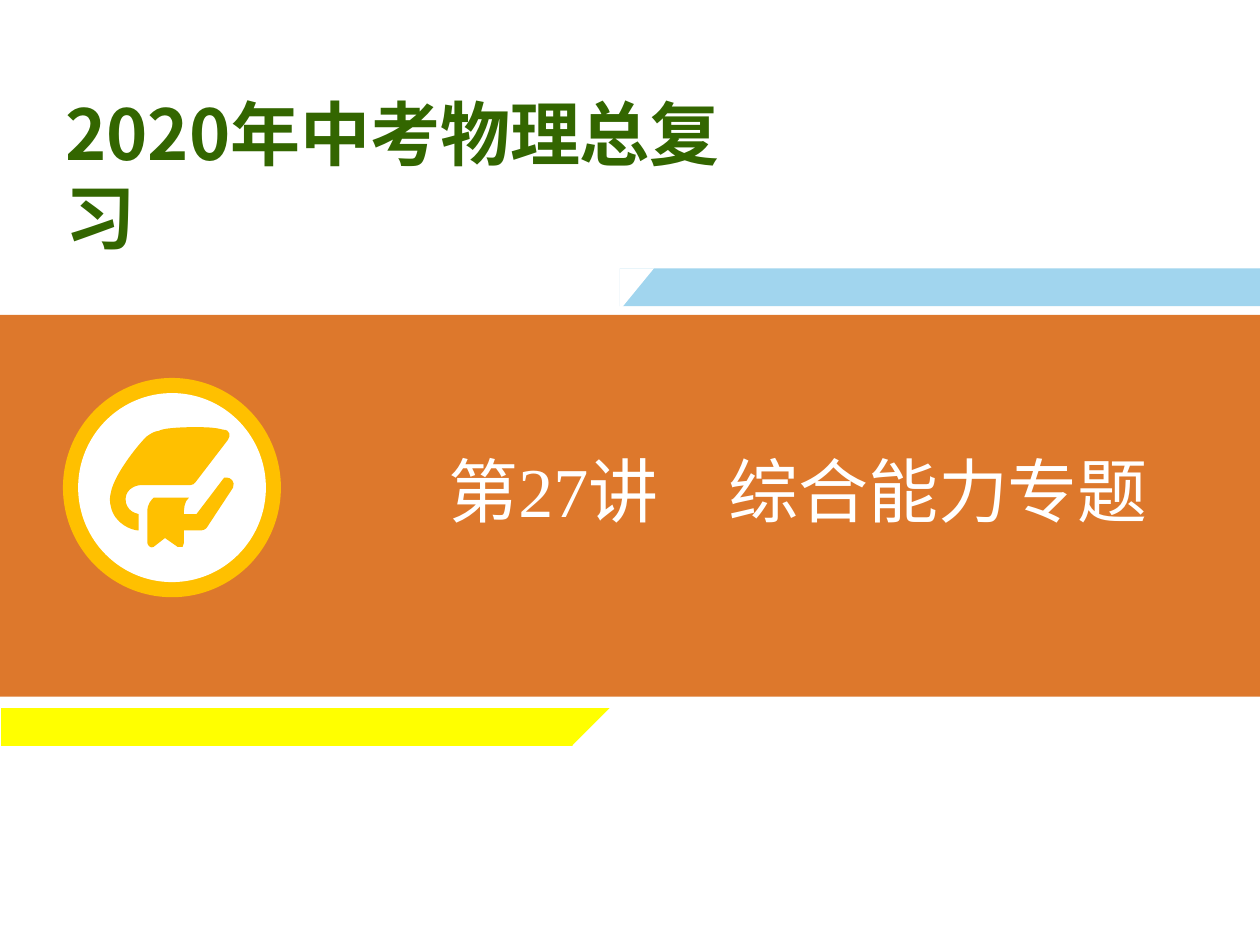
from lxml.etree import SubElement
from pptx import Presentation
from pptx.dml.color import RGBColor
from pptx.enum.shapes import MSO_SHAPE
from pptx.enum.text import MSO_ANCHOR, PP_ALIGN
from pptx.oxml.ns import qn
from pptx.util import Inches, Pt

ORANGE = RGBColor(0xDD, 0x78, 0x2C)
YELLOW = RGBColor(0xFF, 0xFF, 0x00)
GOLD = RGBColor(0xFF, 0xC0, 0x00)
SKY = RGBColor(0xA1, 0xD5, 0xEE)
WHITE = RGBColor(0xFF, 0xFF, 0xFF)
GREEN = RGBColor(0x33, 0x66, 0x00)
CJK_FONT = "Noto Sans CJK SC"
LATIN_FONT = "Times New Roman"

COURSE = "2020年中考物理总复习"
LESSON = "第27讲　综合能力专题"

# Book outlines in inches: one point ends a line, three points make a Bézier curve.
BOOK_PAGES = [
    [(1.78, 3.79)],
    [(1.8, 3.79)],
    [(1.83, 3.79), (1.87, 3.82), (1.85, 3.87)],
    [(1.64, 4.19)],
    [(1.62, 4.21), (1.6, 4.21), (1.59, 4.21)],
    [(1.46, 4.21)],
    [(1.46, 4.31)],
    [(1.46, 4.32), (1.46, 4.33), (1.45, 4.34)],
    [(1.44, 4.34), (1.44, 4.34), (1.43, 4.34)],
    [(1.42, 4.34), (1.42, 4.34), (1.41, 4.34)],
    [(1.31, 4.27)],
    [(1.22, 4.34)],
    [(1.21, 4.34), (1.2, 4.35), (1.19, 4.34)],
    [(1.18, 4.33), (1.17, 4.32), (1.17, 4.31)],
    [(1.17, 4.06)],
    [(1.17, 4), (1.2, 3.97), (1.22, 3.95)],
    [(1.24, 3.95)],
    [(1.5, 3.95)],
    [(1.46, 3.98), (1.46, 4.05), (1.46, 4.08)],
    [(1.56, 4.08)],
]
BOOK_COVER = [
    [(1.54, 3.39)],
    [(1.62, 3.39), (1.7, 3.39), (1.77, 3.41)],
    [(1.83, 3.41), (1.83, 3.46), (1.81, 3.49)],
    [(1.55, 3.83)],
    [(1.54, 3.84), (1.53, 3.85), (1.51, 3.85)],
    [(1.12, 3.85)],
    [(1.07, 3.85), (0.98, 3.89), (1, 3.99)],
    [(1.01, 4.03), (1.04, 4.06), (1.07, 4.07)],
    [(1.08, 4.08), (1.09, 4.08), (1.1, 4.08)],
    [(1.1, 4.21)],
    [(1.05, 4.21), (0.91, 4.16), (0.88, 4.02)],
    [(0.87, 3.98), (0.87, 3.95), (0.88, 3.91)],
    [(0.91, 3.75), (1.13, 3.49), (1.17, 3.46)],
    [(1.2, 3.44), (1.23, 3.42), (1.26, 3.42)],
    [(1.29, 3.4), (1.41, 3.39), (1.54, 3.39)],
]


def paint(shape, color):
    shape.shadow.inherit = False
    shape.fill.solid()
    shape.fill.fore_color.rgb = color
    shape.line.fill.background()


def add_block(shapes, preset, box, color, rotation=0):
    block = shapes.add_shape(preset, *map(Inches, box))
    block.rotation = rotation
    paint(block, color)
    return block


def add_book(shapes):
    """Draw both outlines as lines, then bend the lines that are curves."""
    pages, cover = ([tuple(map(Inches, part[-1])) for part in outline]
                    for outline in (BOOK_PAGES, BOOK_COVER))
    builder = shapes.build_freeform(*pages[0])
    builder.add_line_segments(pages[1:], close=True)
    builder.move_to(*cover[0])
    builder.add_line_segments(cover[1:], close=True)
    book = builder.convert_to_shape()
    paint(book, GOLD)

    segments = list(book._element.iter(qn("a:lnTo")))
    for segment, part in zip(segments, BOOK_PAGES[1:] + BOOK_COVER[1:]):
        if len(part) == 1:
            continue
        curve = segment.getparent().makeelement(qn("a:cubicBezTo"))
        for x, y in part:
            SubElement(curve, qn("a:pt"), x=str(Inches(x) - book.left),
                       y=str(Inches(y) - book.top))
        segment.getparent().replace(segment, curve)


def write(holder, words, font_name, color, bold, alignment):
    frame = holder.text_frame
    frame.word_wrap = True
    frame.vertical_anchor = MSO_ANCHOR.TOP
    paragraph = frame.paragraphs[0]
    paragraph.alignment = alignment
    run = paragraph.add_run()
    run.text = words
    run.font.name = font_name
    run.font.size = Pt(40)
    run.font.bold = bold
    run.font.color.rgb = color
    SubElement(run.font._element, qn("a:ea"), typeface=CJK_FONT)


def main():
    deck = Presentation()
    deck.slide_width, deck.slide_height = Inches(10), Inches(7.5)
    slide = deck.slides.add_slide(deck.slide_layouts[5])
    shapes = slide.shapes

    add_block(shapes, MSO_SHAPE.RECTANGLE, (-0.01, 2.5, 10.01, 3.03), ORANGE)
    add_block(shapes, MSO_SHAPE.RECTANGLE, (0.01, 5.62, 4.91, 0.3), YELLOW)

    title = shapes.title
    title.left, title.top, title.width, title.height = map(Inches, (2.67, 3.5, 7.33, 0.77))
    write(title, LESSON, LATIN_FONT, WHITE, False, PP_ALIGN.CENTER)
    shapes._spTree.append(title._element)  # bring the title in front of the band

    badge = shapes.add_group_shape().shapes
    add_block(badge, MSO_SHAPE.OVAL, (0.5, 3, 1.73, 1.74), GOLD)
    add_block(badge, MSO_SHAPE.OVAL, (0.62, 3.12, 1.49, 1.5), WHITE)
    add_book(badge)

    ribbon = shapes.add_group_shape().shapes
    add_block(ribbon, MSO_SHAPE.RECTANGLE, (4.92, 2.13, 5.08, 0.3), SKY)
    add_block(ribbon, MSO_SHAPE.RIGHT_TRIANGLE, (4.89, 2.16, 0.33, 0.27), WHITE, 90)

    notch = add_block(shapes, MSO_SHAPE.RIGHT_TRIANGLE, (4.55, 5.55, 0.37, 0.37), WHITE, 270)
    notch.line.color.rgb = WHITE
    notch.line.width = Pt(1)

    course = shapes.add_textbox(*map(Inches, (0.42, 0.67, 5.78, 0.77)))
    write(course, COURSE, CJK_FONT, GREEN, True, PP_ALIGN.LEFT)

    deck.save("out.pptx")


if __name__ == "__main__":
    main()
